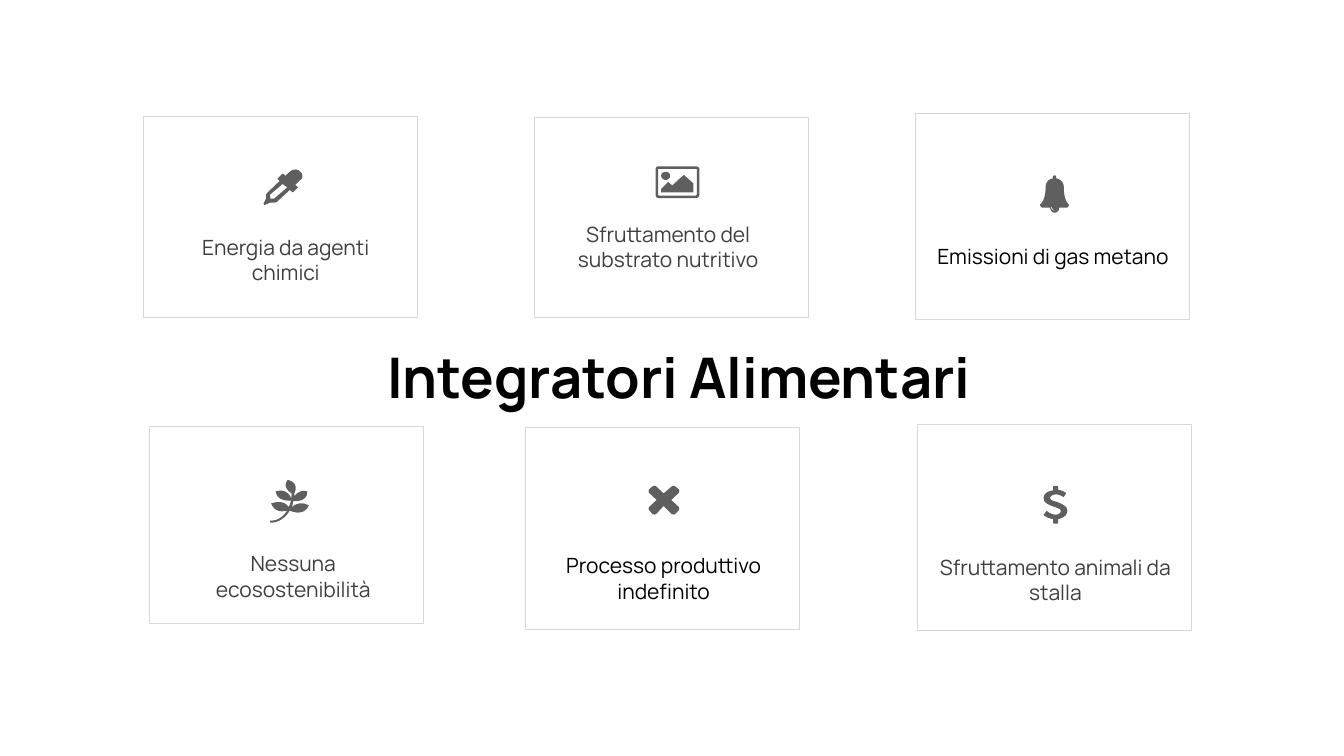
from dataclasses import dataclass

from pptx import Presentation
from pptx.dml.color import RGBColor
from pptx.enum import shapes as sh, text as tx
from pptx.util import Pt

BLACK = RGBColor(0x00, 0x00, 0x00)
DARK = RGBColor(0x3F, 0x3F, 0x3F)
GREY = RGBColor(0x5F, 0x5F, 0x5F)
PALE = RGBColor(0xD8, 0xD8, 0xD8)
FONT = "Manrope"
WIDE = 391.68  # width of every card
UNIT = 0.72  # points in one icon unit
STEPS = 8  # straight pieces for each curve

# Icon outlines: a pair is a corner, six numbers are a Bézier curve
Line = list[tuple[int, ...]]

PIPETTE: list[Line] = [
    [(72, 22), (63, 31), (68, 35), (68, 36), (59, 45), (57, 45), (52, 41),
     (26, 65), (21, 66), (13, 66), (2, 71), (0, 68), (5, 58), (5, 50),
     (7, 47), (32, 23), (28, 19), (28, 18), (37, 9), (40, 9), (43, 13),
     (53, 4), (59, -1, 68, -1, 72, 4), (79, 9, 79, 18, 72, 22)],
    [(47, 36), (38, 29), (13, 50), (13, 58), (21, 58)],
]
PHOTO: list[Line] = [
    [(87, 56), (87, 60, 84, 63, 80, 63), (6, 63), (2, 63, 0, 60, 0, 56),
     (0, 6), (0, 3, 2, 0, 6, 0), (80, 0), (84, 0, 87, 3, 87, 6)],
    [(6, 5), (5, 6), (5, 56), (6, 58), (80, 58), (82, 56), (82, 6), (80, 5)],
    [(20, 27), (15, 27, 11, 23, 11, 19), (11, 14, 15, 11, 20, 11),
     (25, 11, 29, 14, 29, 19), (29, 23, 25, 27, 20, 27)],
    [(75, 52), (11, 52), (11, 45), (25, 31), (33, 38), (56, 17), (75, 34)],
]
BELL: list[Line] = [
    [(53, 64), (38, 64), (38, 69, 34, 74, 29, 74), (24, 74, 20, 69, 20, 64),
     (5, 64), (2, 64, 0, 61, 0, 58), (5, 53, 11, 44, 11, 23),
     (11, 15, 16, 7, 26, 6), (25, 4), (25, 2, 27, 0, 29, 0),
     (31, 0, 32, 2, 32, 4), (32, 6), (41, 7, 47, 15, 47, 23),
     (47, 44, 52, 53, 57, 58), (57, 61, 55, 64, 53, 64)],
    [(29, 69), (26, 69, 24, 66, 24, 64), (23, 62), (22, 64),
     (22, 67, 25, 70, 29, 70)],
]
PLANT: list[Line] = [
    [(39, 61), (31, 75, 17, 85, 2, 85), (0, 85, 0, 83, 0, 82),
     (0, 81, 0, 81, 2, 81), (16, 81, 26, 73, 34, 61), (26, 63, 10, 66, 2, 47),
     (23, 39, 34, 49, 37, 54), (39, 50, 40, 46, 42, 41),
     (42, 41, 14, 45, 11, 23), (35, 15, 42, 37, 42, 37), (43, 27),
     (43, 27, 22, 15, 35, 0), (60, 6, 48, 27, 48, 27), (48, 33),
     (48, 33, 57, 18, 74, 23), (74, 46, 46, 42, 46, 42),
     (45, 46, 45, 51, 42, 55), (42, 55, 58, 39, 77, 51),
     (66, 75, 39, 61, 39, 61)],
]
CROSS: list[Line] = [
    [(60, 48), (53, 56), (49, 57), (46, 56), (30, 40), (15, 56), (12, 57),
     (8, 56), (1, 48), (0, 45), (1, 42), (16, 28), (1, 14), (0, 10), (1, 7),
     (8, 1), (12, 0), (15, 1), (30, 15), (46, 1), (49, 0), (53, 1), (60, 7),
     (61, 10), (60, 14), (45, 28), (60, 42), (61, 45)],
]
DOLLAR: list[Line] = [
    [(30, 66), (30, 74), (28, 75), (21, 75), (20, 74), (20, 66),
     (7, 64, 1, 58, 1, 58), (1, 57), (6, 51), (7, 50), (9, 51),
     (9, 51, 16, 57, 24, 57), (30, 57, 35, 55, 35, 50),
     (35, 45, 28, 44, 23, 42), (13, 38, 1, 35, 1, 24), (1, 16, 9, 10, 20, 9),
     (20, 1), (21, 0), (28, 0), (30, 1), (30, 8), (40, 9, 45, 14, 45, 14),
     (45, 16), (41, 22), (40, 22), (40, 22, 33, 17, 26, 17),
     (18, 17, 14, 21, 14, 24), (14, 29, 21, 30, 28, 32),
     (37, 36, 48, 40, 48, 49), (48, 58, 40, 64, 30, 66)],
]


@dataclass
class Card:
    box: tuple[float, float, float]  # left, top, height
    label: str
    area: tuple[float, float, float, float]  # left, top, width, height
    icon: list[Line]
    spot: tuple[float, float]
    color: RGBColor = DARK


CARDS = [
    Card((205.2, 165.6, 288), "Energia da agenti chimici",
         (243.36, 334.8, 329.76, 82.8), PIPETTE, (376.56, 241.92)),
    Card((763.92, 167.76, 285.84), "Sfruttamento del substrato nutritivo",
         (789.84, 316.08, 329.76, 82.8), PHOTO, (936.72, 237.6)),
    Card((1307.52, 161.28, 294.48), "Emissioni di gas metano",
         (1336.32, 347.76, 336.24, 61.92), BELL, (1486.08, 250.56), BLACK),
    Card((213.12, 608.4, 282.24), "Nessuna ecosostenibilità",
         (245.52, 786.96, 347.04, 41.04), PLANT, (385.92, 685.44)),
    Card((750.96, 609.84, 289.44), "Processo produttivo indefinito",
         (774.72, 789.84, 347.04, 78.48), CROSS, (926.64, 694.08), BLACK),
    Card((1311.12, 606.24, 294.48), "Sfruttamento animali da stalla",
         (1339.92, 792, 336.24, 93.6), DOLLAR, (1490.4, 694.08)),
]


def write(shape, words: str, size: float, color: RGBColor, bold: bool) -> None:
    frame = shape.text_frame
    frame.word_wrap = True
    frame.auto_size = tx.MSO_AUTO_SIZE.NONE
    frame.vertical_anchor = tx.MSO_ANCHOR.TOP
    frame.margin_left = frame.margin_right = Pt(0)
    frame.margin_top = frame.margin_bottom = Pt(0)
    para = frame.paragraphs[0]
    para.alignment = tx.PP_ALIGN.CENTER
    run = para.add_run()
    run.text = words
    font = run.font
    font.name, font.size, font.bold = FONT, Pt(size), bold
    font.color.rgb = color


def trace(line: Line) -> list[tuple[int, int]]:
    """Turn corners and curves into points on the outline."""
    dots: list[tuple[float, float]] = []
    for part in line:
        if len(part) == 2:
            dots.append((part[0], part[1]))
            continue
        ends = [dots[-1], part[0:2], part[2:4], part[4:6]]
        for step in range(1, STEPS + 1):
            t = step / STEPS
            mix = ((1 - t) ** 3, 3 * t * (1 - t) ** 2,
                   3 * t ** 2 * (1 - t), t ** 3)
            dots.append((sum(m * e[0] for m, e in zip(mix, ends)),
                         sum(m * e[1] for m, e in zip(mix, ends))))
    return [(Pt(x * UNIT), Pt(y * UNIT)) for x, y in dots]


def draw_icon(slide, icon: list[Line], spot: tuple[float, float]) -> None:
    paths = [trace(line) for line in icon]
    pen = slide.shapes.build_freeform(*paths[0][0])
    for dots in paths:
        pen.move_to(*dots[0])
        pen.add_line_segments(dots[1:], close=True)
    shape = pen.convert_to_shape(*(Pt(n) for n in spot))
    shape.shadow.inherit = False
    shape.fill.solid()
    shape.fill.fore_color.rgb = GREY
    shape.line.fill.background()


def draw_card(slide, card: Card) -> None:
    left, top, high = card.box
    frame = slide.shapes.add_shape(sh.MSO_SHAPE.RECTANGLE, Pt(left), Pt(top),
                                   Pt(WIDE), Pt(high))
    frame.shadow.inherit = False
    frame.fill.background()
    frame.line.color.rgb = PALE
    frame.line.width = Pt(1)
    label = slide.shapes.add_textbox(*(Pt(n) for n in card.area))
    write(label, card.label, 30, card.color, False)
    draw_icon(slide, card.icon, card.spot)


def main() -> None:
    deck = Presentation()
    deck.slide_width, deck.slide_height = Pt(1920.24), Pt(1080)
    slide = deck.slides.add_slide(deck.slide_layouts[5])

    # Cards with icon and label
    for card in CARDS:
        draw_card(slide, card)

    # Title between the two rows
    title = slide.shapes.title
    title.left, title.top = Pt(482.4), Pt(488.88)
    title.width, title.height = Pt(975.6), Pt(67.68)
    write(title, "Integratori Alimentari", 80, BLACK, True)

    deck.save("out.pptx")


if __name__ == "__main__":
    main()
